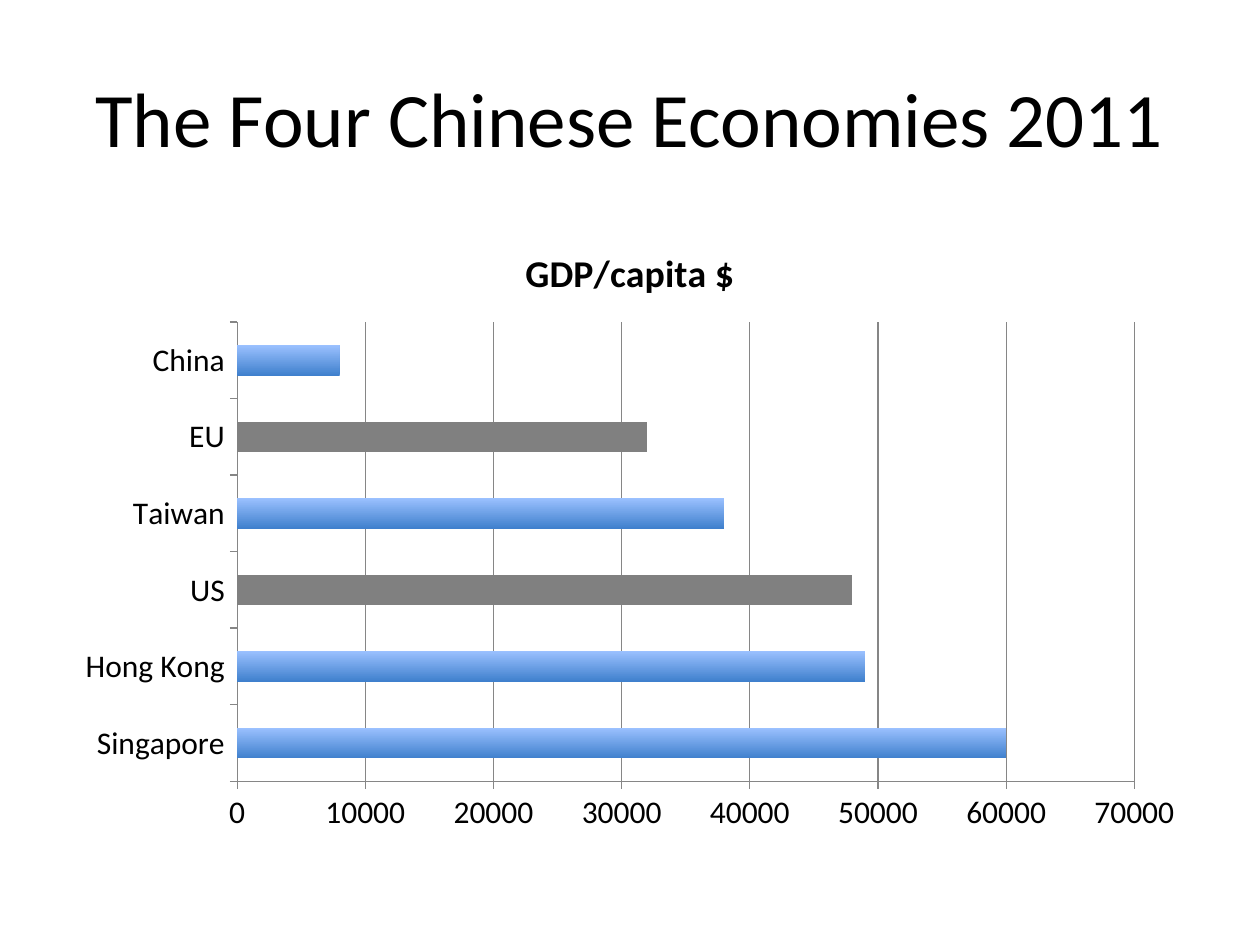
from pptx import Presentation
from pptx.chart.data import CategoryChartData as Data
from pptx.dml.color import RGBColor
from pptx.enum.chart import XL_CHART_TYPE as Kind, XL_TICK_MARK as Tick
from pptx.enum.text import MSO_ANCHOR as Anchor, PP_ALIGN as Align
from pptx.util import Inches, Pt

BLACK = RGBColor(0x00, 0x00, 0x00)
GRAY = RGBColor(0x80, 0x80, 0x80)
LINE = RGBColor(0x86, 0x86, 0x86)
DEEP = RGBColor(0x3F, 0x80, 0xCD)
PALE = RGBColor(0x9B, 0xC1, 0xFF)

GDP = {
    "Singapore": 60000,
    "Hong Kong": 49000,
    "US": 48000,
    "Taiwan": 38000,
    "EU": 32000,
    "China": 8000,
}
OTHERS = ("US", "EU")


def style(font, size, bold=False, color=BLACK, name="Calibri"):
    font.name, font.size, font.bold = name, Pt(size), bold
    font.color.rgb = color


def write(frame, text, align=Align.CENTER, **form):
    frame.text = text
    par = frame.paragraphs[0]
    par.alignment = align
    style(par.runs[0].font, **form)


class Deck:
    def __init__(self, wide, high):
        self.prs = Presentation()
        self.prs.slide_width, self.prs.slide_height = Inches(wide), Inches(high)
        self.slide = self.prs.slides.add_slide(self.prs.slide_layouts[5])

    def title(self, text, box):
        shape = self.slide.shapes.title
        shape.left, shape.top, shape.width, shape.height = map(Inches, box)
        shape.text_frame.vertical_anchor = Anchor.MIDDLE
        write(shape.text_frame, text, size=44)

    def bars(self, name, values, grays, box):
        """Add a bar chart whose bars named in grays are plain gray."""
        data = Data()
        data.categories = list(values)
        data.add_series(name, list(values.values()))
        chart = self.slide.shapes.add_chart(
            Kind.BAR_CLUSTERED, *map(Inches, box), data).chart
        style(chart.font, 18)
        chart.has_legend = False
        chart.has_title = True
        write(chart.chart_title.text_frame, name, size=21.6, bold=True)
        self.axes(chart)

        plot = chart.plots[0]
        plot.gap_width = 150
        plot.vary_by_categories = False
        series = plot.series[0]
        fill = series.format.fill
        fill.gradient()
        fill.gradient_angle = 90
        for stop, color in zip(fill.gradient_stops, (DEEP, PALE)):
            stop.color.rgb = color
        for i, place in enumerate(values):
            if place in grays:
                fill = series.points[i].format.fill
                fill.solid()
                fill.fore_color.rgb = GRAY

    def axes(self, chart):
        val = chart.value_axis
        val.minimum_scale, val.maximum_scale, val.major_unit = 0, 70000, 10000
        val.has_major_gridlines = True
        chart.category_axis.has_major_gridlines = False
        for axis in (val, chart.category_axis):
            axis.major_tick_mark = Tick.OUTSIDE
            axis.minor_tick_mark = Tick.NONE
        for part in (val, chart.category_axis, val.major_gridlines):
            part.format.line.color.rgb = LINE
            part.format.line.width = Pt(0.75)


def main():
    deck = Deck(10, 7.5)
    deck.title("The Four Chinese Economies 2011", (0.5, 0.3, 9, 1.25))
    deck.bars("GDP/capita $", GDP, OTHERS, (0.5, 1.75, 9, 4.95))
    deck.prs.save("out.pptx")


if __name__ == "__main__":
    main()
